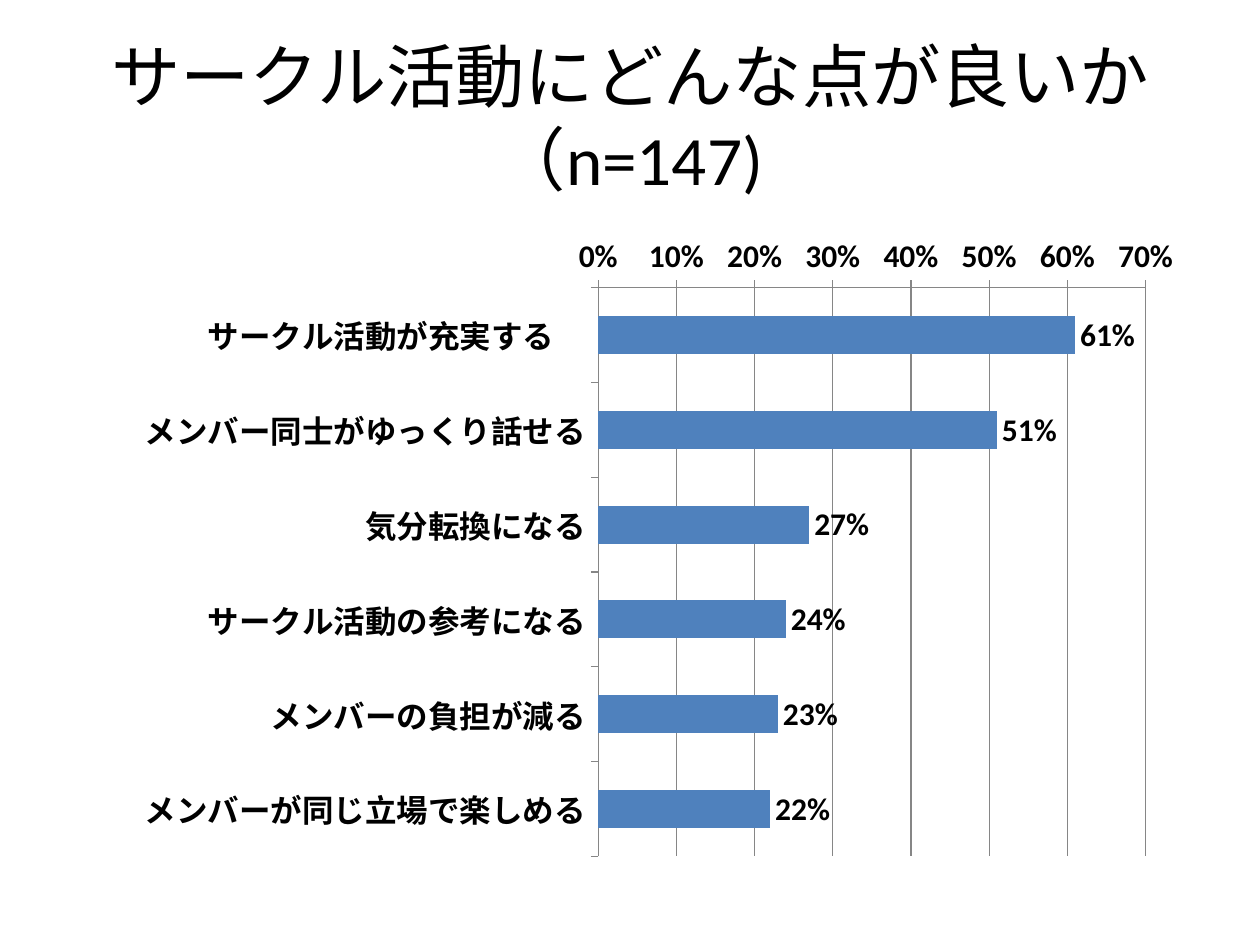
from pptx import Presentation
from pptx import util as u
from pptx.chart.data import CategoryChartData
from pptx.dml.color import RGBColor
from pptx.enum import chart as ch, text

BLACK = RGBColor(0x00, 0x00, 0x00)
BLUE = RGBColor(0x4F, 0x81, 0xBD)
GRAY = RGBColor(0x86, 0x86, 0x86)
FACE = "Calibri"

REASONS = [
    ("サークル活動が充実する\u3000", 0.61),
    ("メンバー同士がゆっくり話せる", 0.51),
    ("気分転換になる", 0.27),
    ("サークル活動の参考になる", 0.24),
    ("メンバーの負担が減る", 0.23),
    ("メンバーが同じ立場で楽しめる", 0.22),
]


def style(font, size, bold=False, color=BLACK):
    font.name, font.size, font.bold = FACE, u.Pt(size), bold
    font.color.rgb = color


def write(frame, words, size, bold=False, color=BLACK,
          align=text.PP_ALIGN.CENTER):
    frame.word_wrap = True
    frame.auto_size = text.MSO_AUTO_SIZE.NONE
    frame.vertical_anchor = text.MSO_ANCHOR.MIDDLE
    para = frame.paragraphs[0]
    para.alignment = align
    run = para.add_run()
    run.text = words
    style(run.font, size, bold, color)


class Deck:
    def __init__(self, wide, high):
        self.prs = Presentation()
        self.prs.slide_width = u.Inches(wide)
        self.prs.slide_height = u.Inches(high)
        self.slide = self.prs.slides.add_slide(self.prs.slide_layouts[5])

    def title(self, words, box, size):
        head = self.slide.shapes.title
        head.left, head.top, head.width, head.height = map(u.Inches, box)
        write(head.text_frame, words, size)

    def bars(self, rows, box, size):
        data = CategoryChartData(number_format="0%")
        data.categories = [name for name, _ in rows]
        data.add_series("Series 1", [share for _, share in rows])
        chart = self.slide.shapes.add_chart(
            ch.XL_CHART_TYPE.BAR_CLUSTERED, *map(u.Inches, box), data).chart
        chart.has_legend = chart.has_title = False
        style(chart.font, size, bold=True)

        # Bars and their labels
        plot = chart.plots[0]
        plot.gap_width, plot.vary_by_categories = 150, False
        fill = plot.series[0].format.fill
        fill.solid()
        fill.fore_color.rgb = BLUE
        plot.has_data_labels = True
        labels = plot.data_labels
        labels.show_value = True
        labels.number_format, labels.number_format_is_linked = "0%", False
        labels.position = ch.XL_LABEL_POSITION.OUTSIDE_END
        style(labels.font, size, bold=True)

        # Axes: first reason on top, percentages above
        cats, vals = chart.category_axis, chart.value_axis
        cats.reverse_order = True
        cats.has_major_gridlines = False
        vals.minimum_scale, vals.maximum_scale = 0, 0.7
        vals.major_unit = 0.1
        vals.has_major_gridlines = True
        vals.tick_labels.number_format = "0%"
        vals.tick_labels.number_format_is_linked = False
        for axis in (cats, vals):
            axis.major_tick_mark = ch.XL_TICK_MARK.OUTSIDE
            axis.minor_tick_mark = ch.XL_TICK_MARK.NONE
            style(axis.tick_labels.font, size, bold=True)
        for part in (cats, vals, vals.major_gridlines):
            part.format.line.color.rgb = GRAY
            part.format.line.width = u.Pt(0.75)


def main():
    deck = Deck(10, 7.5)
    deck.title("サークル活動にどんな点が良いか（n=147)", (0.5, 0.3, 9, 1.25), 39.6)
    deck.bars(REASONS, (0.98, 1.78, 8.5, 5.12), 18)
    deck.prs.save("out.pptx")


if __name__ == "__main__":
    main()
